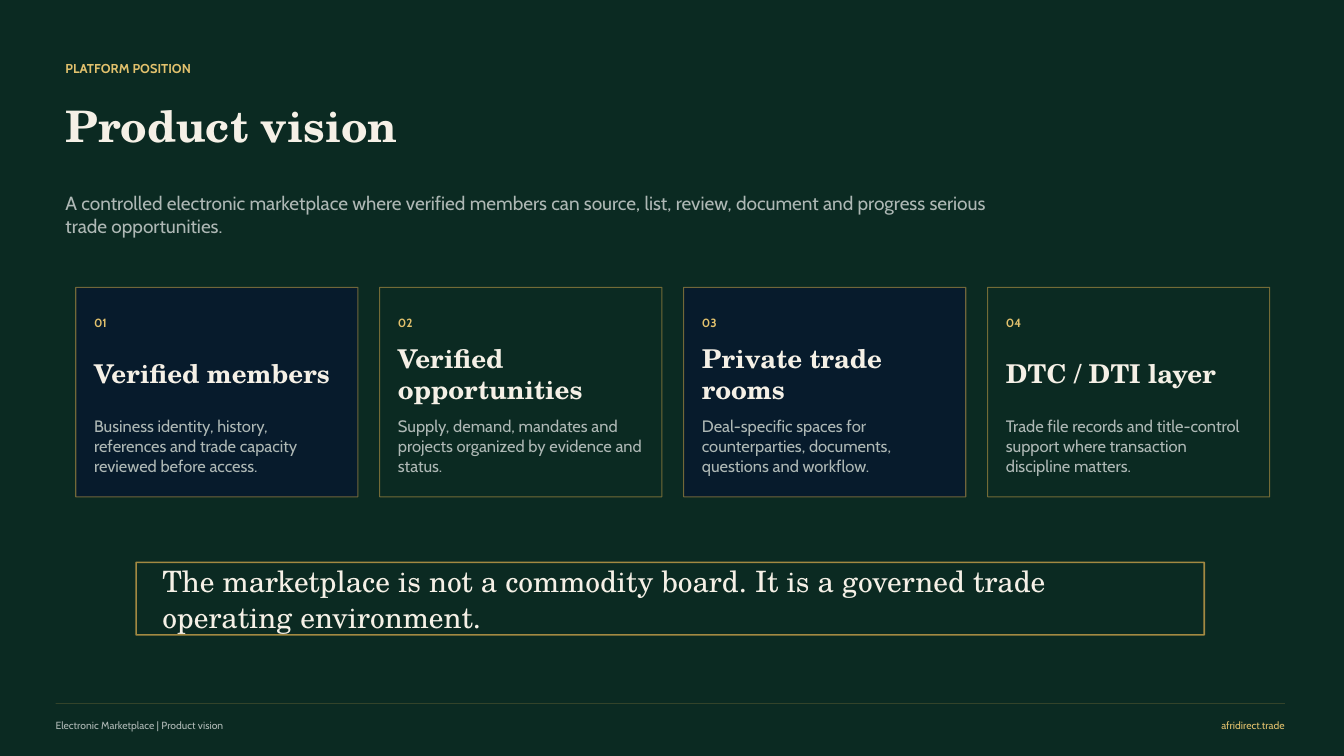
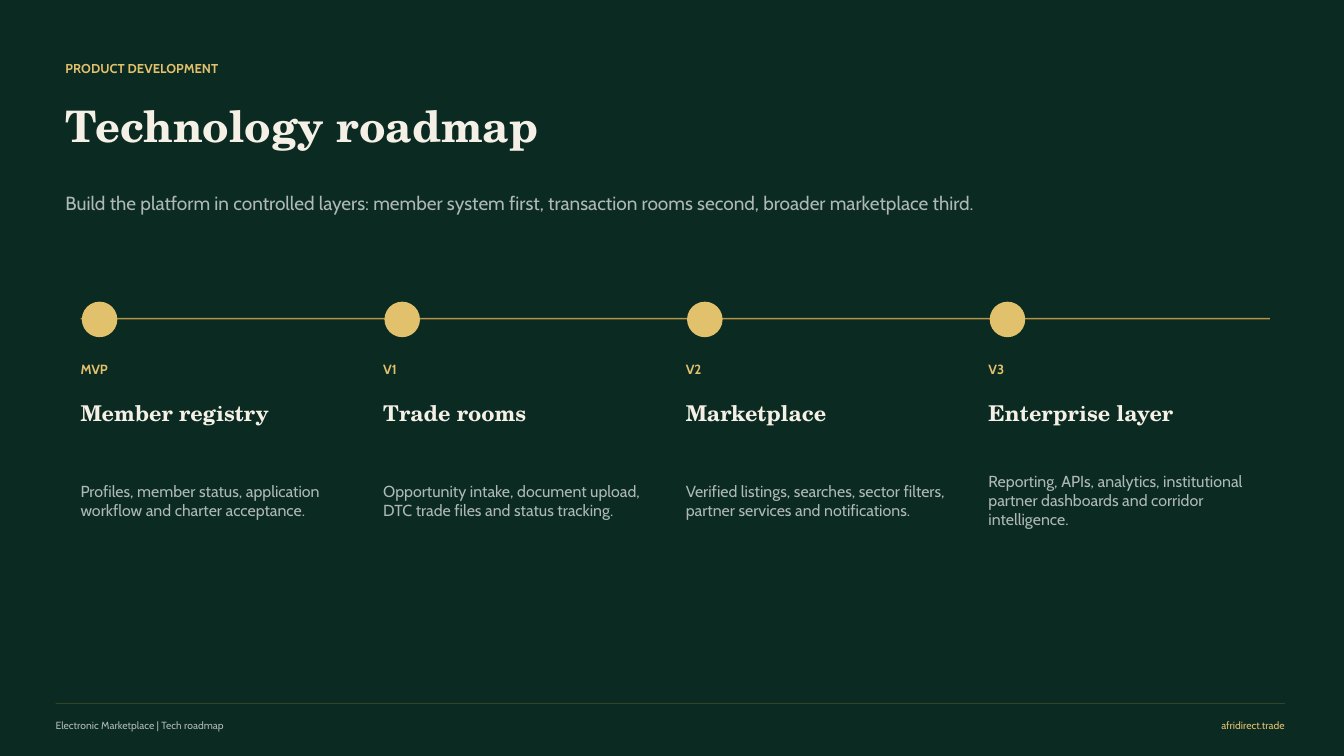
from dataclasses import dataclass

from lxml.etree import SubElement
from pptx import Presentation
from pptx.dml.color import RGBColor
from pptx.enum.shapes import MSO_CONNECTOR, MSO_SHAPE
from pptx.enum.text import MSO_ANCHOR, MSO_AUTO_SIZE, PP_ALIGN
from pptx.oxml.ns import qn
from pptx.util import Cm, Pt

GREEN = RGBColor(0x0B, 0x2A, 0x22)
NAVY = RGBColor(0x07, 0x1A, 0x2D)
GOLD = RGBColor(0xC9, 0xA1, 0x4A)
LIGHT_GOLD = RGBColor(0xE2, 0xC1, 0x6D)
CREAM = RGBColor(0xF5, 0xF0, 0xE6)
GREY = RGBColor(0xAE, 0xB8, 0xB5)

SANS = "Cabin"
SERIF = "TeX Gyre Schola"


@dataclass(frozen=True)
class TextStyle:
    font: str
    size: float
    color: RGBColor
    bold: bool = False
    anchor: MSO_ANCHOR = MSO_ANCHOR.MIDDLE


KICKER = TextStyle(SANS, 9.2, LIGHT_GOLD, bold=True)
TITLE = TextStyle(SERIF, 31, CREAM, bold=True)
LEAD = TextStyle(SANS, 13.6, GREY, anchor=MSO_ANCHOR.TOP)
FOOTER = TextStyle(SANS, 7.4, GREY)
ADDRESS = TextStyle(SANS, 7.4, LIGHT_GOLD)
STATEMENT = TextStyle(SERIF, 21, CREAM)

# Rows of a text column: top and height in cm, text style
CARD_ROWS = [
    (7.7, 0.86, TextStyle(SANS, 8.5, LIGHT_GOLD, bold=True)),
    (8.71, 1.4, TextStyle(SERIF, 18.5, CREAM, bold=True)),
    (10.39, 1.68, TextStyle(SANS, 11.8, GREY)),
]
MILESTONE_ROWS = [
    (8.94, 0.71, TextStyle(SANS, 9.5, LIGHT_GOLD, bold=True)),
    (9.78, 1.27, TextStyle(SERIF, 15.5, CREAM, bold=True)),
    (11.25, 2.72, TextStyle(SANS, 11.4, GREY)),
]

CARDS = [
    ("Verified members",
     "Business identity, history, references and trade capacity reviewed before access."),
    ("Verified opportunities",
     "Supply, demand, mandates and projects organized by evidence and status."),
    ("Private trade rooms",
     "Deal-specific spaces for counterparties, documents, questions and workflow."),
    ("DTC / DTI layer",
     "Trade file records and title-control support where transaction discipline matters."),
]
MILESTONES = [
    ("MVP", "Member registry",
     "Profiles, member status, application workflow and charter acceptance."),
    ("V1", "Trade rooms",
     "Opportunity intake, document upload, DTC trade files and status tracking."),
    ("V2", "Marketplace",
     "Verified listings, searches, sector filters, partner services and notifications."),
    ("V3", "Enterprise layer",
     "Reporting, APIs, analytics, institutional partner dashboards and corridor intelligence."),
]


def column_lefts(left, right, width, count):
    """Left edges of equally spaced columns that fill the span."""
    pitch = (right - left - width) / (count - 1)
    return [left + index * pitch for index in range(count)]


def set_opacity(parent, percent):
    for color in parent.iter(qn("a:srgbClr")):
        SubElement(color, qn("a:alpha"), val=str(percent * 1000))


def write_text(shape, text, style, align=PP_ALIGN.LEFT, side_inset=0):
    frame = shape.text_frame
    frame.word_wrap = True
    frame.auto_size = MSO_AUTO_SIZE.NONE
    frame.vertical_anchor = style.anchor
    frame.margin_left = frame.margin_right = Cm(side_inset)
    frame.margin_top = frame.margin_bottom = 0
    frame.text = text
    para = frame.paragraphs[0]
    para.alignment = align
    para.font.name = style.font
    para.font.size = Pt(style.size)
    para.font.bold = style.bold
    para.font.color.rgb = style.color


def add_text(slide, left, top, width, height, text, style, align=PP_ALIGN.LEFT):
    box = slide.shapes.add_textbox(Cm(left), Cm(top), Cm(width), Cm(height))
    write_text(box, text, style, align)


def add_text_column(slide, left, width, rows, texts):
    for (top, height, style), text in zip(rows, texts):
        add_text(slide, left, top, width, height, text, style)


def add_panel(slide, left, top, width, height, fill, fill_opacity,
              line_width, line_opacity):
    """Translucent rectangle with a gold outline."""
    panel = slide.shapes.add_shape(
        MSO_SHAPE.RECTANGLE, Cm(left), Cm(top), Cm(width), Cm(height))
    panel.shadow.inherit = False
    panel.fill.solid()
    panel.fill.fore_color.rgb = fill
    panel.line.color.rgb = GOLD
    panel.line.width = Pt(line_width)
    properties = panel.element.spPr
    set_opacity(properties.find(qn("a:solidFill")), fill_opacity)
    set_opacity(properties.find(qn("a:ln")), line_opacity)
    return panel


def add_rule(slide, left, right, top, line_width, opacity):
    rule = slide.shapes.add_connector(
        MSO_CONNECTOR.STRAIGHT, Cm(left), Cm(top), Cm(right), Cm(top))
    rule.line.color.rgb = GOLD
    rule.line.width = Pt(line_width)
    properties = rule.element.spPr
    set_opacity(properties.find(qn("a:ln")), opacity)
    SubElement(properties, qn("a:effectLst"))


def add_dot(slide, left, top, size):
    dot = slide.shapes.add_shape(
        MSO_SHAPE.OVAL, Cm(left), Cm(top), Cm(size), Cm(size))
    dot.shadow.inherit = False
    dot.fill.solid()
    dot.fill.fore_color.rgb = LIGHT_GOLD
    dot.line.color.rgb = LIGHT_GOLD
    dot.line.width = Pt(1)


def add_page(deck, kicker, title, lead, footer, width):
    """Slide with the shared background, heading block and footer."""
    page = deck.slides.add_slide(deck.slide_layouts.get_by_name("Title Only"))
    heading = page.shapes.title
    heading.left, heading.top = Cm(1.65), Cm(2.24)
    heading.width, heading.height = Cm(width), Cm(1.83)
    write_text(heading, title, TITLE)
    add_text(page, 1.65, 1.4, width, 0.64, kicker, KICKER)
    add_text(page, 1.65, 4.83, width, 1.32, lead, LEAD)
    add_text(page, 1.4, 18.08, 14.22, 0.41, f"Electronic Marketplace | {footer}", FOOTER)
    add_text(page, 26.16, 18.08, 6.22, 0.41, "afridirect.trade", ADDRESS, PP_ALIGN.RIGHT)
    add_rule(page, 1.4, 32.38, 17.73, 0.5, 32)
    return page


def add_vision_page(deck):
    page = add_page(
        deck, "PLATFORM POSITION", "Product vision",
        "A controlled electronic marketplace where verified members can source, list, "
        "review, document and progress serious trade opportunities.",
        "Product vision", 23.88)
    width, padding = 7.11, 0.46
    lefts = column_lefts(1.91, 32, width, len(CARDS))
    for number, (left, card) in enumerate(zip(lefts, CARDS), start=1):
        fill = NAVY if number % 2 else GREEN
        add_panel(page, left, 7.24, width, 5.28, fill, 92, 0.75, 55)
        add_text_column(page, left + padding, width - 2 * padding, CARD_ROWS,
                        (f"{number:02}", *card))
    banner = add_panel(page, 3.43, 14.17, 26.92, 1.83, GREEN, 95, 1.1, 80)
    write_text(
        banner,
        "The marketplace is not a commodity board. It is a governed trade operating environment.",
        STATEMENT, side_inset=0.66)


def add_roadmap_page(deck):
    page = add_page(
        deck, "PRODUCT DEVELOPMENT", "Technology roadmap",
        "Build the platform in controlled layers: member system first, transaction rooms "
        "second, broader marketplace third.",
        "Tech roadmap", 23.11)
    start, end, width = 2.03, 32, 7.09
    add_rule(page, start, end, 8.03, 1.1, 90)
    lefts = column_lefts(start, end, width, len(MILESTONES))
    for left, milestone in zip(lefts, MILESTONES):
        add_dot(page, left + 0.05, 7.62, 0.86)
        add_text_column(page, left, width, MILESTONE_ROWS, milestone)


def main():
    deck = Presentation()
    deck.slide_width, deck.slide_height = Cm(33.87), Cm(19.05)
    background = deck.slide_master.background.fill
    background.solid()
    background.fore_color.rgb = GREEN
    add_vision_page(deck)
    add_roadmap_page(deck)
    deck.save("out.pptx")


if __name__ == "__main__":
    main()
